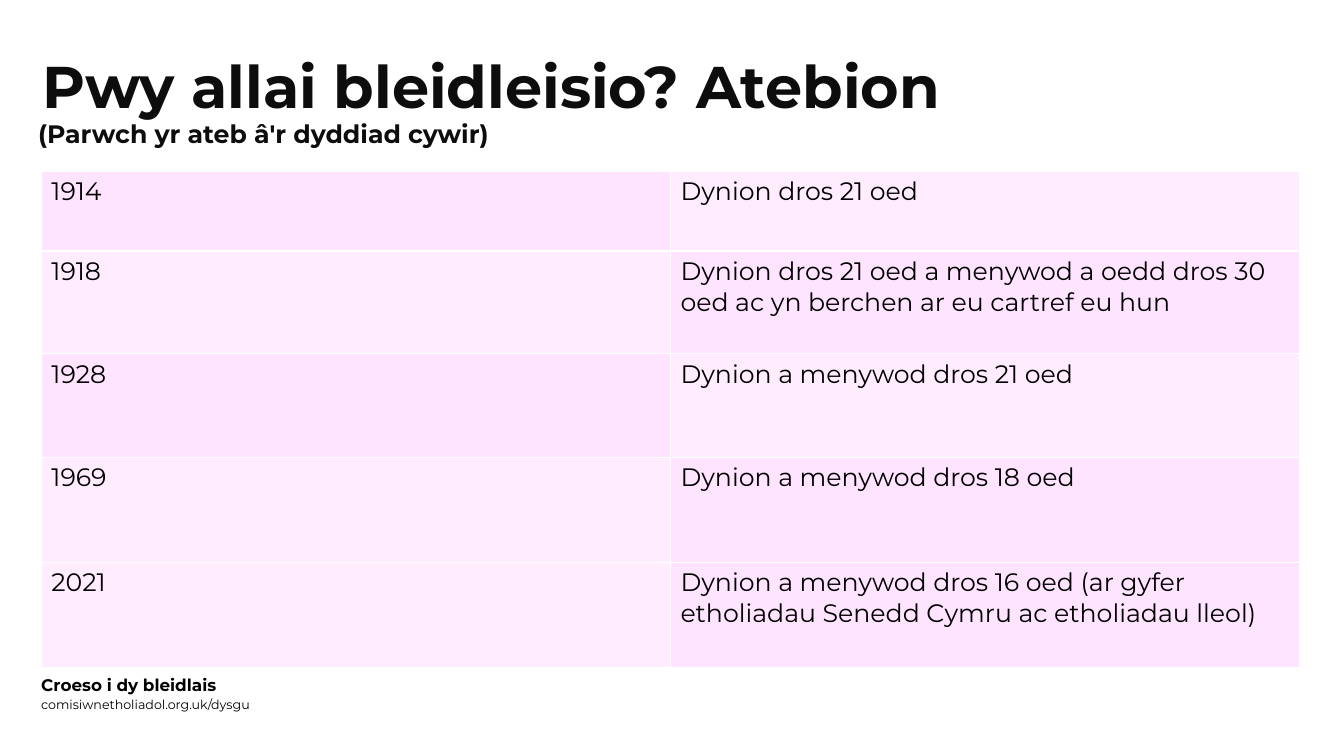
from lxml import etree
from pptx import Presentation
from pptx.dml.color import RGBColor
from pptx.enum import text
from pptx.oxml import ns
from pptx.util import Inches, Pt

COLOURS = {"title": "0D0D0D", "body": "000000", "cell": "FF8BFF", "border": "FFFFFF"}
STRONG, LIGHT = 23, 15
ANSWERS = [
    ("1914", "Dynion dros 21 oed", 0.79, STRONG, LIGHT),
    ("1918", "Dynion dros 21 oed a menywod a oedd dros 30 oed ac yn berchen ar eu cartref eu hun", 1.02, LIGHT, STRONG),
    ("1928", "Dynion a menywod dros 21 oed", 1.03, STRONG, LIGHT),
    ("1969", "Dynion a menywod dros 18 oed", 1.04, LIGHT, STRONG),
    ("2021", "Dynion a menywod dros 16 oed (ar gyfer etholiadau Senedd Cymru ac etholiadau lleol)", 1.04, LIGHT, STRONG),
]


def write(frame, wording, size, colour, bold=False, spacing=None):
    frame.text = wording
    frame.word_wrap = True
    paragraph = frame.paragraphs[0]
    paragraph.alignment = text.PP_ALIGN.LEFT
    paragraph.line_spacing = spacing
    paragraph.font.name = "Montserrat"
    paragraph.font.size = Pt(size)
    paragraph.font.bold = bold
    paragraph.font.color.rgb = RGBColor.from_string(COLOURS[colour])


def format_cell(cell, opacity):
    cell.fill.solid()
    cell.fill.fore_color.rgb = RGBColor.from_string(COLOURS["cell"])
    properties = cell._tc.get_or_add_tcPr()
    colour = properties.find(".//" + ns.qn("a:srgbClr"))
    etree.SubElement(colour, ns.qn("a:alpha"), val=str(opacity * 1000))
    for position, side in enumerate(("a:lnL", "a:lnR", "a:lnT", "a:lnB")):
        border = etree.Element(ns.qn(side), w=str(Pt(1)))
        fill = etree.SubElement(border, ns.qn("a:solidFill"))
        etree.SubElement(fill, ns.qn("a:srgbClr"), val=COLOURS["border"])
        properties.insert(position, border)


presentation = Presentation()
presentation.slide_width = Inches(13.33)
presentation.slide_height = Inches(7.5)
slide = presentation.slides.add_slide(presentation.slide_layouts[5])

title = slide.shapes.title
title.left, title.top = Inches(0.32), Inches(0.51)
title.width, title.height = Inches(10.98), Inches(0.75)
write(title.text_frame, "Pwy allai bleidleisio? Atebion", 42, "title", True, 0.9)
title.text_frame.auto_size = text.MSO_AUTO_SIZE.NONE
title.text_frame.vertical_anchor = text.MSO_ANCHOR.MIDDLE

subtitle = slide.shapes.add_textbox(Inches(0.28), Inches(1.18), Inches(7.08), Inches(0.35))
write(subtitle.text_frame, "(Parwch yr ateb â'r dyddiad cywir)", 18, "title", True, 0.8)

table = slide.shapes.add_table(
    len(ANSWERS), 2, Inches(0.41), Inches(1.7), Inches(12.48), Inches(4.92)
).table
table.first_row = table.horz_banding = False
for row, (year, voters, height, *opacities) in enumerate(ANSWERS):
    table.rows[row].height = Inches(height)
    for column, wording in enumerate((year, voters)):
        cell = table.cell(row, column)
        write(cell.text_frame, wording, 18, "body")
        format_cell(cell, opacities[column])

for wording, top, size, bold in (
    ("Croeso i dy bleidlais", 6.59, 12, True),
    ("comisiwnetholiadol.org.uk/dysgu", 6.79, 9, False),
):
    footer = slide.shapes.add_textbox(Inches(0.31), Inches(top), Inches(7.65), Inches(0.4))
    write(footer.text_frame, wording, size, "body", bold)
    footer.text_frame.vertical_anchor = text.MSO_ANCHOR.MIDDLE

presentation.save("out.pptx")
